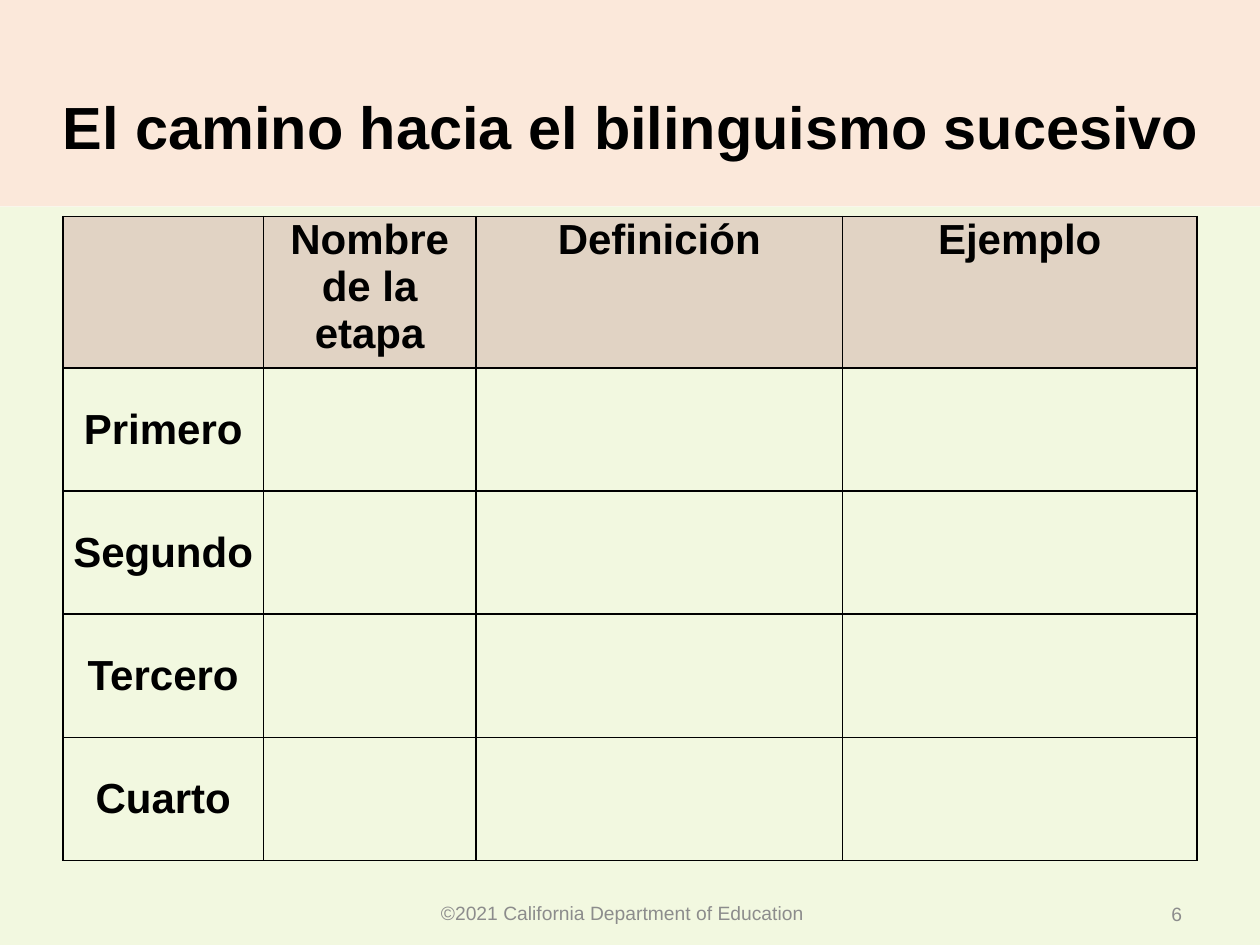
from dataclasses import dataclass

import lxml.etree
import pptx
import pptx.dml.color
import pptx.enum.shapes
import pptx.enum.text
import pptx.oxml.ns
import pptx.util

Pt = pptx.util.Pt
Align = pptx.enum.text.PP_ALIGN
Anchor = pptx.enum.text.MSO_ANCHOR


@dataclass(frozen=True)
class Theme:
    """Colours, font and type sizes of the slide."""
    font: str = "Arial"
    ink: str = "000000"
    muted: str = "8C8C8C"
    banner: str = "FBE8DA"
    body: str = "F2F8E0"
    header: str = "E1D3C4"
    title_size: int = 34
    table_size: int = 24
    footer_size: int = 11


THEME = Theme()


def rgb(value):
    """Return the colour for a hex string."""
    return pptx.dml.color.RGBColor.from_string(value)


def write(frame, text, size, color, align, bold=False):
    """Set one styled paragraph in a text frame."""
    frame.text = text
    line = frame.paragraphs[0]
    line.alignment = align
    for run in line.runs:
        run.font.name = THEME.font
        run.font.size = Pt(size)
        run.font.bold = bold
        run.font.color.rgb = rgb(color)


def add_band(slide, box, color):
    """Add a plain background band."""
    band = slide.shapes.add_shape(
        pptx.enum.shapes.MSO_SHAPE.RECTANGLE, *map(Pt, box))
    band.shadow.inherit = False
    band.fill.solid()
    band.fill.fore_color.rgb = rgb(color)
    band.line.fill.background()


def add_label(slide, box, text, size, color, align, bold=False, inset=None):
    """Add a vertically centred text box."""
    frame = slide.shapes.add_textbox(*map(Pt, box)).text_frame
    frame.word_wrap = True
    frame.vertical_anchor = Anchor.MIDDLE
    if inset is not None:
        frame.margin_left = frame.margin_right = Pt(inset)
        frame.margin_top = frame.margin_bottom = Pt(inset)
    write(frame, text, size, color, align, bold)


def add_borders(cell):
    """Draw a thin line on all four sides of a cell."""
    properties = cell._tc.get_or_add_tcPr()
    qn = pptx.oxml.ns.qn
    for index, side in enumerate(("a:lnL", "a:lnR", "a:lnT", "a:lnB")):
        border = lxml.etree.Element(qn(side), w=str(Pt(1)))
        fill = lxml.etree.SubElement(border, qn("a:solidFill"))
        lxml.etree.SubElement(fill, qn("a:srgbClr"), val=THEME.ink)
        properties.insert(index, border)


def add_stages(slide, box, headings, stages, widths, header_height):
    """Add the grid of stages with a shaded heading row."""
    grid = slide.shapes.add_table(
        len(stages) + 1, len(headings), *map(Pt, box)).table
    grid.first_row = grid.horz_banding = False
    for column, width in zip(grid.columns, widths):
        column.width = Pt(width)
    stage_height = (box[3] - header_height) / len(stages)
    for index, row in enumerate(grid.rows):
        is_header = index == 0
        row.height = Pt(header_height if is_header else stage_height)
        texts = headings if is_header else [stages[index - 1]] + [""] * (len(headings) - 1)
        for cell, text in zip(row.cells, texts):
            cell.margin_left = cell.margin_right = Pt(3.6)
            cell.margin_top = cell.margin_bottom = 0
            cell.vertical_anchor = Anchor.TOP if is_header else Anchor.MIDDLE
            if is_header:
                cell.fill.solid()
                cell.fill.fore_color.rgb = rgb(THEME.header)
            else:
                cell.fill.background()
            add_borders(cell)
            if text:
                write(cell.text_frame, text, THEME.table_size, THEME.ink,
                      Align.CENTER, bold=True)


def main():
    """Build and save the slide."""
    deck = pptx.Presentation()
    deck.slide_width, deck.slide_height = Pt(720), Pt(540)
    slide = deck.slides.add_slide(deck.slide_layouts[6])
    banner_height = 118
    add_band(slide, (0, 0, 720, banner_height), THEME.banner)
    add_band(slide, (0, banner_height, 720, 540 - banner_height), THEME.body)
    add_label(slide, (36, 36, 654, 72), "El camino hacia el bilinguismo sucesivo",
              THEME.title_size, THEME.ink, Align.LEFT, bold=True, inset=0)
    add_stages(slide, (36, 123.8, 648, 368),
               ["", "Nombre de la etapa", "Definición", "Ejemplo"],
               ["Primero", "Segundo", "Tercero", "Cuarto"],
               (114.5, 121.5, 209.5, 202.5), 86.4)
    add_label(slide, (234, 507, 243.4, 28.8), "©2021 California Department of Education",
              THEME.footer_size, THEME.muted, Align.CENTER)
    add_label(slide, (520.5, 507.6, 162, 28.8), "6",
              THEME.footer_size, THEME.muted, Align.RIGHT)
    deck.save("out.pptx")


if __name__ == "__main__":
    main()
